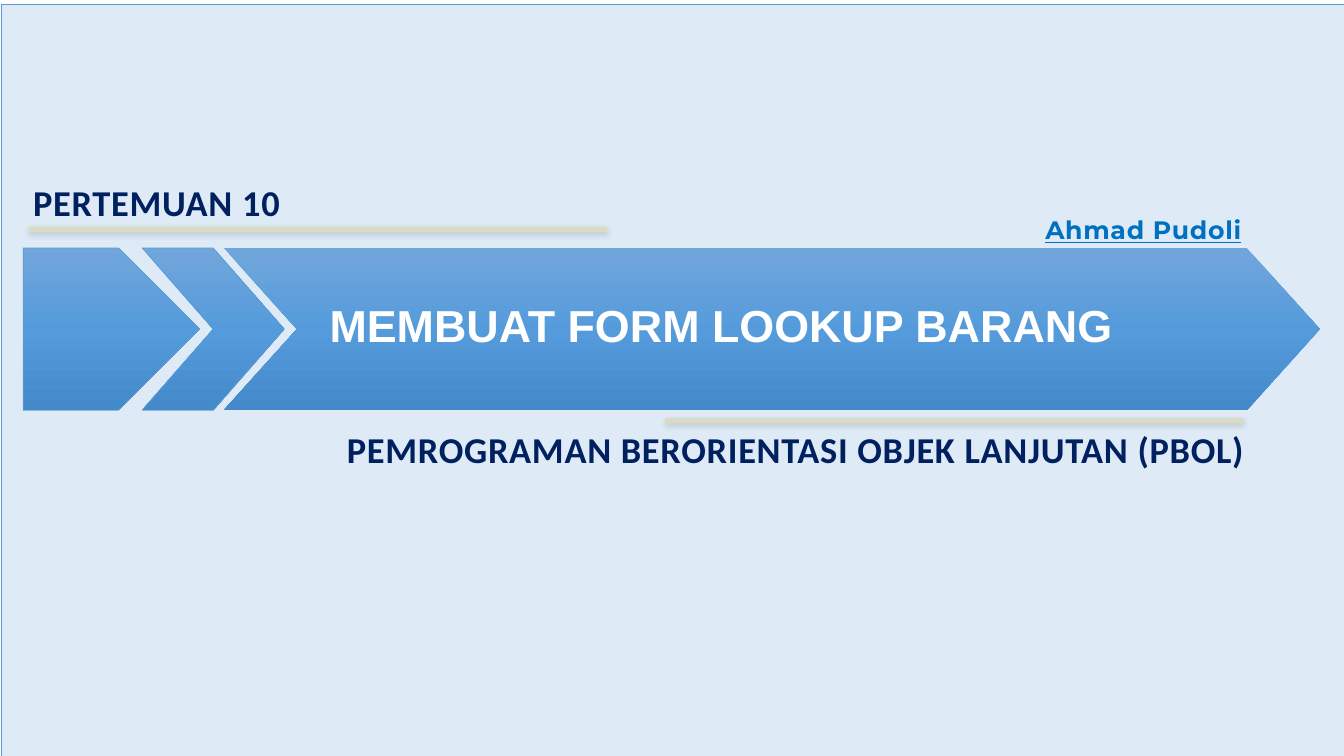
from copy import deepcopy

from lxml import etree
from pptx import Presentation
from pptx.dml.color import RGBColor
from pptx.enum.shapes import MSO_SHAPE
from pptx.enum.text import MSO_ANCHOR, PP_ALIGN
from pptx.oxml.ns import qn
from pptx.util import Inches, Pt

RECTANGLE, PENTAGON, CHEVRON = MSO_SHAPE.RECTANGLE, MSO_SHAPE.PENTAGON, MSO_SHAPE.CHEVRON
MIDDLE = MSO_ANCHOR.MIDDLE
LEFT, RIGHT = PP_ALIGN.LEFT, PP_ALIGN.RIGHT

COLORS = {
    "backdrop": "DEEBF7",
    "outline": "5B9BD5",
    "navy": "002060",
    "link": "0070C0",
    "white": "FFFFFF",
    "rule": "DBDBC0",
    "shadow": "000000",
}
ARROW_GRADIENT = [(0, "71A6DB"), (0.5, "559BDB"), (1, "448ACA")]
ARROW_TOP, ARROW_HEIGHT = 2.46, 1.61
HEADING = {"size": Pt(26), "name": "Calibri", "bold": True}
TITLE = {"size": Pt(32), "name": "Arial", "bold": True}
AUTHOR = {"size": Pt(18), "name": "Montserrat", "bold": True, "underline": True}


def color(name):
    return RGBColor.from_string(COLORS[name])


def add_block(page, kind, left, top, width, height, outlined):
    block = page.shapes.add_shape(kind, Inches(left), Inches(top), Inches(width), Inches(height))
    block.shadow.inherit = False
    if outlined:
        block.line.color.rgb = color("outline")
        block.line.width = Pt(0.5)
    else:
        block.line.fill.background()
    return block


def fill_solid(block, name):
    block.fill.solid()
    block.fill.fore_color.rgb = color(name)


def add_arrow(page, kind, left, width, point, outlined):
    """Add one gradient arrow; point is the tip length as a share of the height."""
    arrow = add_block(page, kind, left, ARROW_TOP, width, ARROW_HEIGHT, outlined)
    arrow.adjustments[0] = point
    arrow.fill.gradient()
    arrow.fill.gradient_angle = 270
    stop_list = arrow._element.spPr.find(qn("a:gradFill")).find(qn("a:gsLst"))
    stop_list.append(deepcopy(stop_list[0]))
    for stop, (position, tone) in zip(arrow.fill.gradient_stops, ARROW_GRADIENT):
        stop.position = position
        stop.color.rgb = RGBColor.from_string(tone)


def add_rule(page, left, top):
    """Add a thin pale bar with a soft shadow below it."""
    rule = add_block(page, RECTANGLE, left + 0.04, top + 0.02, 5.73, 0.05, False)
    fill_solid(rule, "rule")
    effects = rule._element.spPr.find(qn("a:effectLst"))
    shadow = etree.SubElement(effects, qn("a:outerShdw"), blurRad=str(Pt(4.5)),
                              dist=str(Pt(1.5)), dir="5400000", rotWithShape="0")
    tone = etree.SubElement(shadow, qn("a:srgbClr"), val=COLORS["shadow"])
    etree.SubElement(tone, qn("a:alpha"), val="15000")


def add_text(page, text, left, top, width, height, style, tone, align=LEFT, spacing=0):
    box = page.shapes.add_textbox(Inches(left), Inches(top), Inches(width), Inches(height))
    frame = box.text_frame
    frame.word_wrap = True
    frame.vertical_anchor = MIDDLE
    para = frame.paragraphs[0]
    para.alignment = align
    span = para.add_run()
    span.text = text
    for key, value in style.items():
        setattr(span.font, key, value)
    span.font.color.rgb = color(tone)
    if spacing:
        span.font._element.set("spc", str(int(spacing * 100)))


def main():
    deck = Presentation()
    deck.slide_width, deck.slide_height = Inches(13.33), Inches(7.5)
    page = deck.slides.add_slide(deck.slide_layouts[6])

    backdrop = add_block(page, RECTANGLE, 0.01, 0.04, 13.33, 7.5, True)
    fill_solid(backdrop, "backdrop")

    add_arrow(page, PENTAGON, 0.23, 1.75, 0.5, True)
    add_arrow(page, CHEVRON, 1.41, 1.41, 0.5, True)
    add_arrow(page, CHEVRON, 2.22, 10.87, 0.45, False)

    add_text(page, "PERTEMUAN 10", 0.23, 1.82, 4.67, 0.36, HEADING, "navy", spacing=0.5)
    add_rule(page, 0.25, 2.23)
    add_rule(page, 6.56, 4.13)
    add_text(page, "PEMROGRAMAN BERORIENTASI OBJEK LANJUTAN (PBOL)",
             1.99, 4.27, 10.46, 0.36, HEADING, "navy", RIGHT, 0.5)
    add_text(page, "MEMBUAT FORM LOOKUP BARANG", 3.17, 2.65, 9.43, 1.14, TITLE, "white")
    add_text(page, "Ahmad Pudoli", 8.92, 2.1, 3.49, 0.36, AUTHOR, "link", RIGHT, 0.5)

    deck.save("out.pptx")


if __name__ == "__main__":
    main()
